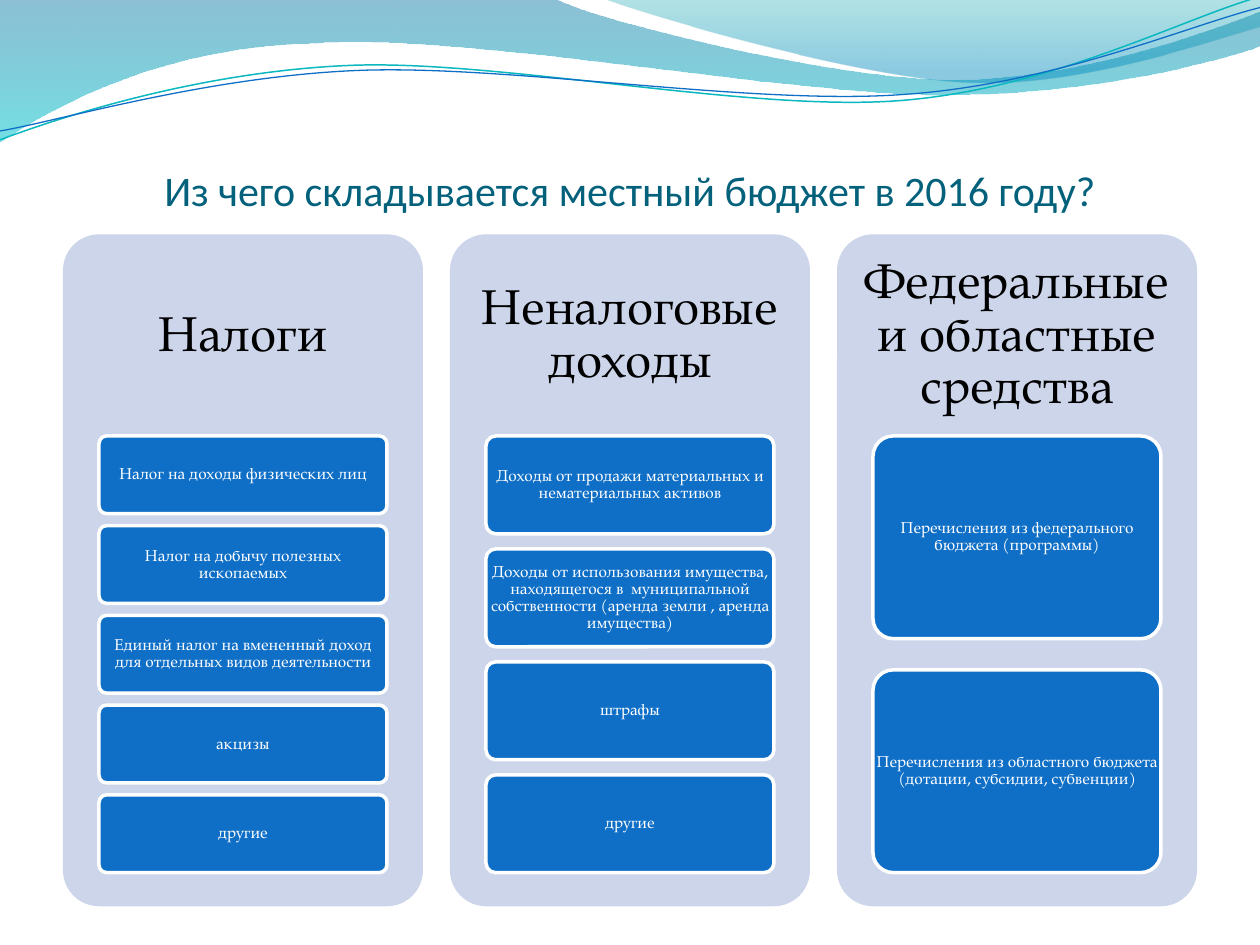
from lxml.etree import SubElement
from pptx import Presentation
from pptx.dml.color import RGBColor
from pptx.enum.shapes import MSO_SHAPE
from pptx.enum.text import MSO_ANCHOR, PP_ALIGN
from pptx.oxml.ns import qn
from pptx.util import Inches, Pt

ROUNDED = MSO_SHAPE.ROUNDED_RECTANGLE
CENTER = PP_ALIGN.CENTER
MIDDLE, BOTTOM = MSO_ANCHOR.MIDDLE, MSO_ANCHOR.BOTTOM

WHITE = RGBColor(0xFF, 0xFF, 0xFF)
BLACK = RGBColor(0x00, 0x00, 0x00)
TITLE_TEAL = RGBColor(0x04, 0x61, 0x7B)
PANEL_BLUE = RGBColor(0xCC, 0xD5, 0xEA)
ITEM_BLUE = RGBColor(0x0F, 0x6F, 0xC6)
LINE_TEAL = RGBColor(0x0A, 0xB8, 0xBF)
DEEP_BLUE = RGBColor(0x00, 0x74, 0xA1)
TURQUOISE = RGBColor(0x00, 0xC6, 0xCF)
SEA_GREEN = RGBColor(0x00, 0xA1, 0xA9)
SKY_BLUE = RGBColor(0x00, 0x8B, 0xBF)

TITLE = "Из чего складывается местный бюджет в 2016 году?"
INCOME = {
    "Налоги": [
        "Налог на доходы физических лиц",
        "Налог на добычу полезных ископаемых",
        "Единый налог на вмененный доход для отдельных видов деятельности",
        "акцизы",
        "другие",
    ],
    "Неналоговые доходы": [
        "Доходы от продажи материальных и нематериальных активов",
        "Доходы от использования имущества, находящегося в  муниципальной "
        "собственности (аренда земли , аренда имущества)",
        "штрафы",
        "другие",
    ],
    "Федеральные и областные средства": [
        "Перечисления из федерального бюджета (программы)",
        "Перечисления из областного бюджета (дотации, субсидии, субвенции)",
    ],
}

# Wave outlines in inches: a 2-number step is a line, a 6-number one a curve
BROAD_WAVE = [
    (0, 0), (4.4, -0.01),
    (4.76, 0.17, 6.64, 0.63, 7.58, 0.63), (8.53, 0.63, 9.58, 0.26, 10, 0.09),
    (10.01, 0.36),
    (9.83, 0.44, 8.7, 0.76, 7.46, 0.75), (6.22, 0.75, 3.82, 0.28, 2.57, 0.34),
    (1.29, 0.36, 0.46, 0.83, -0.01, 1.13),
]
RIGHT_WAVE = [
    (4.79, -0.01),
    (5.09, 0.11, 6.82, 0.62, 7.69, 0.65), (8.56, 0.69, 9.61, 0.32, 10, 0.21),
    (10, 0),
]
TEAL_STROKE = [
    (0, 1.11),
    (0.48, 0.93, 1.58, 0.57, 2.77, 0.52), (3.95, 0.47, 5.93, 0.89, 7.13, 0.8),
    (8.33, 0.71, 9.38, 0.15, 9.98, -0.02),
]
BLUE_STROKE = [
    (0, 1.04),
    (0.47, 0.96, 1.64, 0.61, 2.83, 0.56), (4.03, 0.51, 5.97, 0.84, 7.17, 0.75),
    (8.36, 0.67, 9.41, 0.21, 10, 0.06),
]


class BudgetSlide:
    body_font = "TeX Gyre Pagella"
    title_font = "Calibri"
    corner = 0.1

    def __init__(self, deck):
        self.width, self.height = deck.slide_width, deck.slide_height
        self.shapes = deck.slides.add_slide(deck.slide_layouts[6]).shapes

    def box(self, x, y, w, h):
        """Shares of the slide to lengths."""
        return (round(x * self.width), round(y * self.height),
                round(w * self.width), round(h * self.height))

    def outline(self, steps, close):
        points = [(Inches(step[i]), Inches(step[i + 1]))
                  for step in steps for i in range(0, len(step), 2)]
        builder = self.shapes.build_freeform(*points[0], scale=1.0)
        builder.add_line_segments(points[1:], close=close)
        shape = builder.convert_to_shape()
        shape.shadow.inherit = False
        # Join each three segments of a curve step into one cubic curve
        segments = iter(list(shape._element.spPr.iter(qn("a:lnTo"))))
        for step in steps[1:]:
            first = next(segments)
            if len(step) == 6:
                first.tag = qn("a:cubicBezTo")
                for _ in range(2):
                    segment = next(segments)
                    first.append(segment[0])
                    segment.getparent().remove(segment)
        return shape

    def wave(self, steps, stops):
        shape = self.outline(steps, close=True)
        shape.line.fill.background()
        shape.fill.gradient()
        shape.fill.gradient_angle = 270
        for stop, (position, color, _) in zip(shape.fill.gradient_stops, stops):
            stop.position, stop.color.rgb = position, color
        colors = shape._element.spPr.iter(qn("a:srgbClr"))
        for node, (_, _, opacity) in zip(list(colors), stops):
            SubElement(node, qn("a:alpha")).set("val", str(opacity * 1000))

    def stroke(self, steps, color, width):
        shape = self.outline(steps, close=False)
        shape.fill.background()
        shape.line.color.rgb, shape.line.width = color, Pt(width)

    def card(self, area, fill, border=None):
        shape = self.shapes.add_shape(ROUNDED, *self.box(*area))
        shape.adjustments[0] = self.corner
        shape.shadow.inherit = False
        shape.fill.solid()
        shape.fill.fore_color.rgb = fill
        if border is None:
            shape.line.fill.background()
        else:
            shape.line.color.rgb, shape.line.width = border, Pt(2)

    def text(self, area, words, size, color, margins, font=body_font,
             anchor=MIDDLE, spacing=0.9):
        frame = self.shapes.add_textbox(*self.box(*area)).text_frame
        sides = ("margin_left", "margin_top", "margin_right", "margin_bottom")
        frame_format = {"word_wrap": True, "vertical_anchor": anchor,
                        **dict(zip(sides, map(Inches, margins)))}
        paragraph = frame.paragraphs[0]
        run = paragraph.add_run()
        run.text = words
        run.font.color.rgb = color
        formats = (
            (frame, frame_format),
            (paragraph, {"alignment": CENTER, "line_spacing": spacing}),
            (run.font, {"size": Pt(size), "name": font}),
        )
        for target, values in formats:
            for key, value in values.items():
                setattr(target, key, value)

    def income_column(self, area, heading, items):
        x, y, w, h = area
        self.card(area, PANEL_BLUE)
        self.text((x, y, w, 0.3 * h), heading, 28, BLACK, [0.12] * 4)
        # Items fill 65% of the panel; each gap is 15.4% of an item
        gap = 0.154
        item_h = 0.65 * h / (len(items) + gap * (len(items) - 1))
        for row, item in enumerate(items):
            item_area = (x + 0.1 * w, y + 0.3 * h + row * item_h * (1 + gap),
                         0.8 * w, item_h)
            self.card(item_area, ITEM_BLUE, WHITE)
            self.text(item_area, item, 9, WHITE, [0.02] * 4)


def main():
    deck = Presentation()
    deck.slide_width, deck.slide_height = Inches(10), Inches(7.5)
    slide = BudgetSlide(deck)

    # Waves along the top
    slide.wave(BROAD_WAVE, [(0, DEEP_BLUE, 45), (1, TURQUOISE, 55)])
    slide.wave(RIGHT_WAVE, [(0, SEA_GREEN, 30), (0.8, SKY_BLUE, 45)])
    slide.stroke(TEAL_STROKE, LINE_TEAL, 0.85)
    slide.stroke(BLUE_STROKE, ITEM_BLUE, 0.75)

    # Title
    slide.text((0.05, 0.11, 0.9, 0.117), TITLE, 24, TITLE_TEAL, (0, 0.05, 0, 0),
               font=slide.title_font, anchor=BOTTOM, spacing=1.0)

    # Three income columns, each gap 7.5% of a column
    column_w = 0.9 / 3.15
    for column, (heading, items) in enumerate(INCOME.items()):
        area = (0.05 + column * column_w * 1.075, 0.248, column_w, 0.711)
        slide.income_column(area, heading, items)

    deck.save("out.pptx")


if __name__ == "__main__":
    main()
